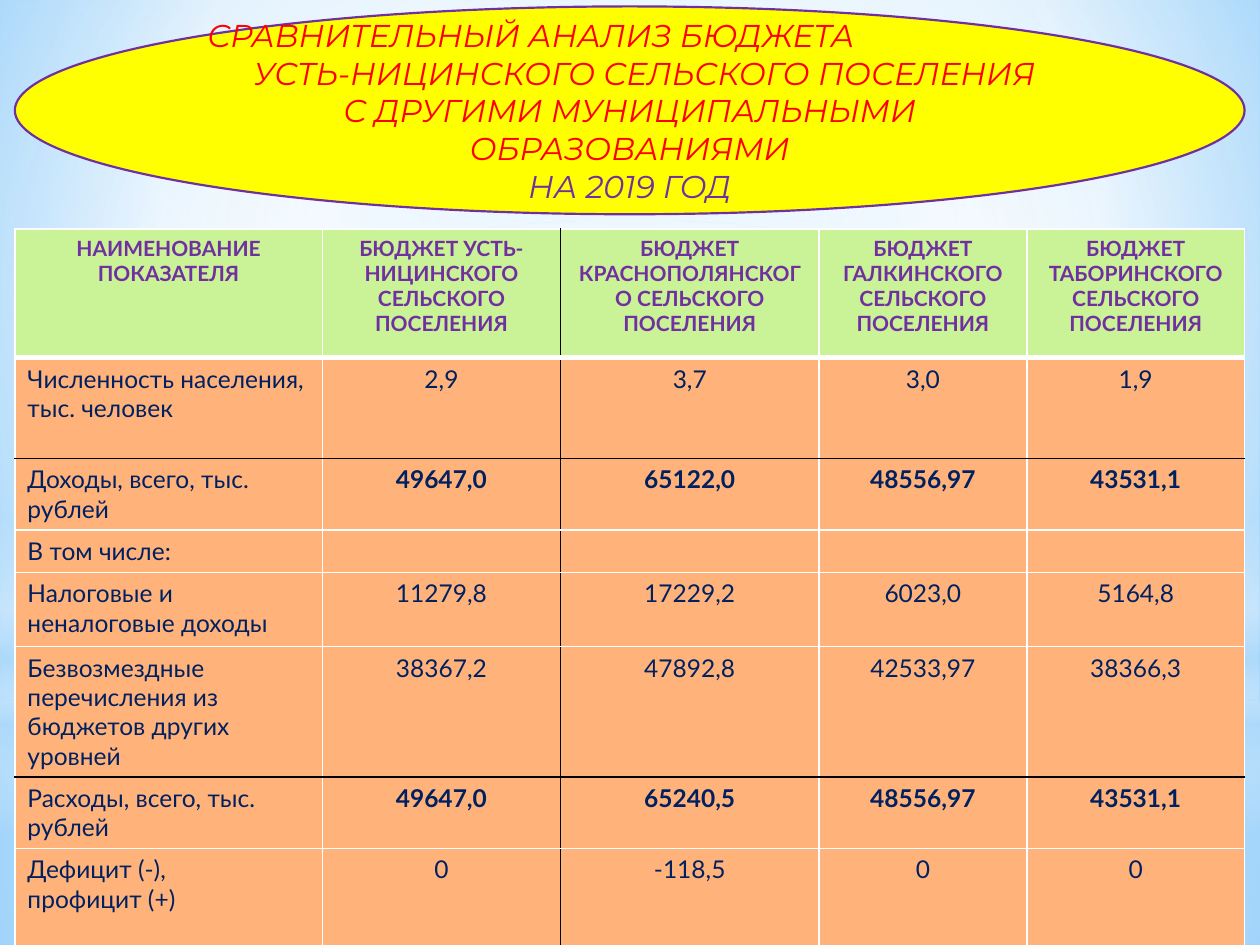
import dataclasses

import lxml.etree
import pptx
import pptx.dml.color
import pptx.enum.shapes
import pptx.enum.text
import pptx.oxml.ns
import pptx.util

Cm = pptx.util.Cm
Pt = pptx.util.Pt
RGB = pptx.dml.color.RGBColor.from_string
qn = pptx.oxml.ns.qn
SubElement = lxml.etree.SubElement
MSO_SHAPE = pptx.enum.shapes.MSO_SHAPE
PP_ALIGN = pptx.enum.text.PP_ALIGN


@dataclasses.dataclass(frozen=True)
class Theme:
    title_font: str = "Montserrat"
    table_font: str = "Lato"
    title_size: int = 18
    header_size: int = 12
    body_size: int = 14
    purple: str = "7030A0"
    red: str = "FF0000"
    navy: str = "002060"
    yellow: str = "FFFF00"
    green: str = "CAF297"
    orange: str = "FFB37A"
    white: str = "FFFFFF"
    black: str = "000000"
    haze: str = "B4DCFA"
    sky: str = "9ED5FF"
    deep_sky: str = "5BB9FF"


T = Theme()


@dataclasses.dataclass(frozen=True)
class Stop:
    pos: int
    color: str
    opacity: int = 100


@dataclasses.dataclass(frozen=True)
class Glow:
    kind: MSO_SHAPE
    top: float
    height: float
    stops: tuple[Stop, ...]
    focus: tuple[int, ...] | None = (50, 50, 50, 50)


@dataclasses.dataclass(frozen=True)
class Row:
    height: float
    cells: tuple[str, ...]
    header: bool = False
    total: bool = False


@dataclasses.dataclass(frozen=True)
class TitleLine:
    text: str
    color: str = T.red
    align: PP_ALIGN = PP_ALIGN.CENTER
    left: float = 0


SLIDE_W, SLIDE_H = 25.4, 19.05
MARGIN, TABLE_TOP = 0.3, 4.62
COLUMNS = (6.2, 4.8, 5.21, 4.19, 4.39)
BLACK_COLUMN_EDGE = 2

GLOWS = (
    Glow(MSO_SHAPE.RECTANGLE, 14.17, 4.88,
         (Stop(0, T.white, 91), Stop(37, T.white, 76), Stop(100, T.haze, 79))),
    Glow(MSO_SHAPE.RECTANGLE, 0, 14.17,
         (Stop(0, T.white, 89), Stop(48, T.white, 62), Stop(100, T.haze, 79))),
    Glow(MSO_SHAPE.RECTANGLE, 10.46, 6.35,
         (Stop(0, T.white, 0), Stop(29, T.white, 30), Stop(45, T.haze, 40),
          Stop(55, T.white, 26), Stop(65, T.haze, 60), Stop(100, T.white, 0)), None),
    Glow(MSO_SHAPE.OVAL, 4.45, 14.17, (Stop(0, T.white), Stop(56, T.white, 0))),
)

TITLE = (
    TitleLine("СРАВНИТЕЛЬНЫЙ АНАЛИЗ БЮДЖЕТА", align=PP_ALIGN.LEFT),
    TitleLine("УСТЬ-НИЦИНСКОГО СЕЛЬСКОГО ПОСЕЛЕНИЯ", left=0.6),
    TitleLine("С ДРУГИМИ МУНИЦИПАЛЬНЫМИ ОБРАЗОВАНИЯМИ"),
    TitleLine("НА 2019 ГОД", T.purple),
)

ROWS = (
    Row(2.59, ("НАИМЕНОВАНИЕ ПОКАЗАТЕЛЯ",
               "БЮДЖЕТ УСТЬ-НИЦИНСКОГО СЕЛЬСКОГО ПОСЕЛЕНИЯ",
               "БЮДЖЕТ КРАСНОПОЛЯНСКОГО СЕЛЬСКОГО ПОСЕЛЕНИЯ",
               "БЮДЖЕТ ГАЛКИНСКОГО СЕЛЬСКОГО ПОСЕЛЕНИЯ",
               "БЮДЖЕТ ТАБОРИНСКОГО СЕЛЬСКОГО ПОСЕЛЕНИЯ"), header=True),
    Row(2.03, ("Численность населения, тыс. человек", "2,9", "3,7", "3,0", "1,9")),
    Row(1.44, ("Доходы, всего, тыс. рублей",
               "49647,0", "65122,0", "48556,97", "43531,1"), total=True),
    Row(0.84, ("В том числе:", "", "", "", "")),
    Row(1.5, ("Налоговые и неналоговые доходы", "11279,8", "17229,2", "6023,0", "5164,8")),
    Row(2.62, ("Безвозмездные перечисления из бюджетов других уровней",
               "38367,2", "47892,8", "42533,97", "38366,3")),
    Row(1.44, ("Расходы, всего, тыс. рублей",
               "49647,0", "65240,5", "48556,97", "43531,1"), total=True),
    Row(1.97, ("Дефицит (-),\nпрофицит (+)", "0", "-118,5", "0", "0")),
)


def write(p, text: str, *, font: str, size: int, color: str, bold: bool = False,
          italic: bool = False, align=PP_ALIGN.CENTER, left: float = 0) -> None:
    p.alignment = align
    pPr = p._p.get_or_add_pPr()
    pPr.set("marL", str(int(Cm(left))))
    pPr.set("indent", "0")
    if not text:
        SubElement(p._p, qn("a:endParaRPr"), sz=str(size * 100))
        return
    r = p.add_run()
    r.text = text
    r.font.name, r.font.size = font, Pt(size)
    r.font.bold, r.font.italic = bold, italic
    r.font.color.rgb = RGB(color)


def fill_gradient(owner, fill, stops: tuple[Stop, ...],
                  focus: tuple[int, ...] | None) -> None:
    fill.gradient()
    grad = owner.element.find(".//" + qn("a:gradFill"))
    for child in list(grad):
        grad.remove(child)
    gs_list = SubElement(grad, qn("a:gsLst"))
    for stop in stops:
        gs = SubElement(gs_list, qn("a:gs"), pos=str(stop.pos * 1000))
        clr = SubElement(gs, qn("a:srgbClr"), val=stop.color)
        if stop.opacity < 100:
            SubElement(clr, qn("a:alpha"), val=str(stop.opacity * 1000))
    if focus is None:
        SubElement(grad, qn("a:lin"), ang="5400000", scaled="0")
    else:
        circle = SubElement(grad, qn("a:path"), {"path": "circle"})
        SubElement(circle, qn("a:fillToRect"),
                   {side: str(v * 1000) for side, v in zip("ltrb", focus)})


def draw_glow(slide, glow: Glow) -> None:
    sp = slide.shapes.add_shape(glow.kind, 0, Cm(glow.top), Cm(SLIDE_W), Cm(glow.height))
    sp.shadow.inherit = False
    sp.line.fill.background()
    fill_gradient(sp, sp.fill, glow.stops, glow.focus)


def set_border(cell, side: str, color: str, width: float) -> None:
    ln = SubElement(cell._tc.get_or_add_tcPr(), qn("a:ln" + side), w=str(int(Pt(width))))
    SubElement(SubElement(ln, qn("a:solidFill")), qn("a:srgbClr"), val=color)


def draw_cell(cell, i: int, j: int) -> None:
    row = ROWS[i]
    next_is_total = i + 1 < len(ROWS) and ROWS[i + 1].total
    black_sides = {"L": j == BLACK_COLUMN_EDGE, "R": j == BLACK_COLUMN_EDGE - 1,
                   "T": row.total, "B": next_is_total}
    for side, black in black_sides.items():
        thick = (side == "B" and row.header) or (side == "T" and i == 1)
        set_border(cell, side, T.black if black else T.white, 3 if thick else 1)
    cell.fill.solid()
    cell.fill.fore_color.rgb = RGB(T.green if row.header else T.orange)
    tf = cell.text_frame
    for n, line in enumerate(row.cells[j].split("\n")):
        p = tf.add_paragraph() if n else tf.paragraphs[0]
        write(p, line, font=T.table_font,
              size=T.header_size if row.header else T.body_size,
              color=T.purple if row.header else T.navy,
              bold=row.header or (row.total and j > 0),
              align=PP_ALIGN.CENTER if row.header or j else PP_ALIGN.LEFT)


def draw_table(slide) -> None:
    table = slide.shapes.add_table(
        len(ROWS), len(COLUMNS), Cm(MARGIN), Cm(TABLE_TOP),
        Cm(sum(COLUMNS)), Cm(sum(row.height for row in ROWS))).table
    for column, width in zip(table.columns, COLUMNS):
        column.width = Cm(width)
    for i, row in enumerate(ROWS):
        table.rows[i].height = Cm(row.height)
        for j in range(len(COLUMNS)):
            draw_cell(table.cell(i, j), i, j)


def draw_title(slide) -> None:
    sp = slide.shapes.add_shape(MSO_SHAPE.OVAL, Cm(MARGIN), Cm(0.13),
                                Cm(sum(COLUMNS)), Cm(4.19))
    sp.shadow.inherit = False
    sp.fill.solid()
    sp.fill.fore_color.rgb = RGB(T.yellow)
    sp.line.color.rgb = RGB(T.purple)
    sp.line.width = Pt(1.25)
    tf = sp.text_frame
    tf.word_wrap = True
    tf.vertical_anchor = pptx.enum.text.MSO_ANCHOR.MIDDLE
    for n, line in enumerate(TITLE):
        p = tf.add_paragraph() if n else tf.paragraphs[0]
        write(p, line.text, font=T.title_font, size=T.title_size, color=line.color,
              italic=True, align=line.align, left=line.left)


def main() -> None:
    prs = pptx.Presentation()
    prs.slide_width, prs.slide_height = Cm(SLIDE_W), Cm(SLIDE_H)
    slide = prs.slides.add_slide(prs.slide_layouts[6])
    fill_gradient(slide, slide.background.fill,
                  (Stop(0, T.sky), Stop(60, T.white), Stop(100, T.deep_sky)),
                  (20, 10, 20, 60))
    for glow in GLOWS:
        draw_glow(slide, glow)
    draw_table(slide)
    draw_title(slide)
    prs.save("out.pptx")


if __name__ == "__main__":
    main()
